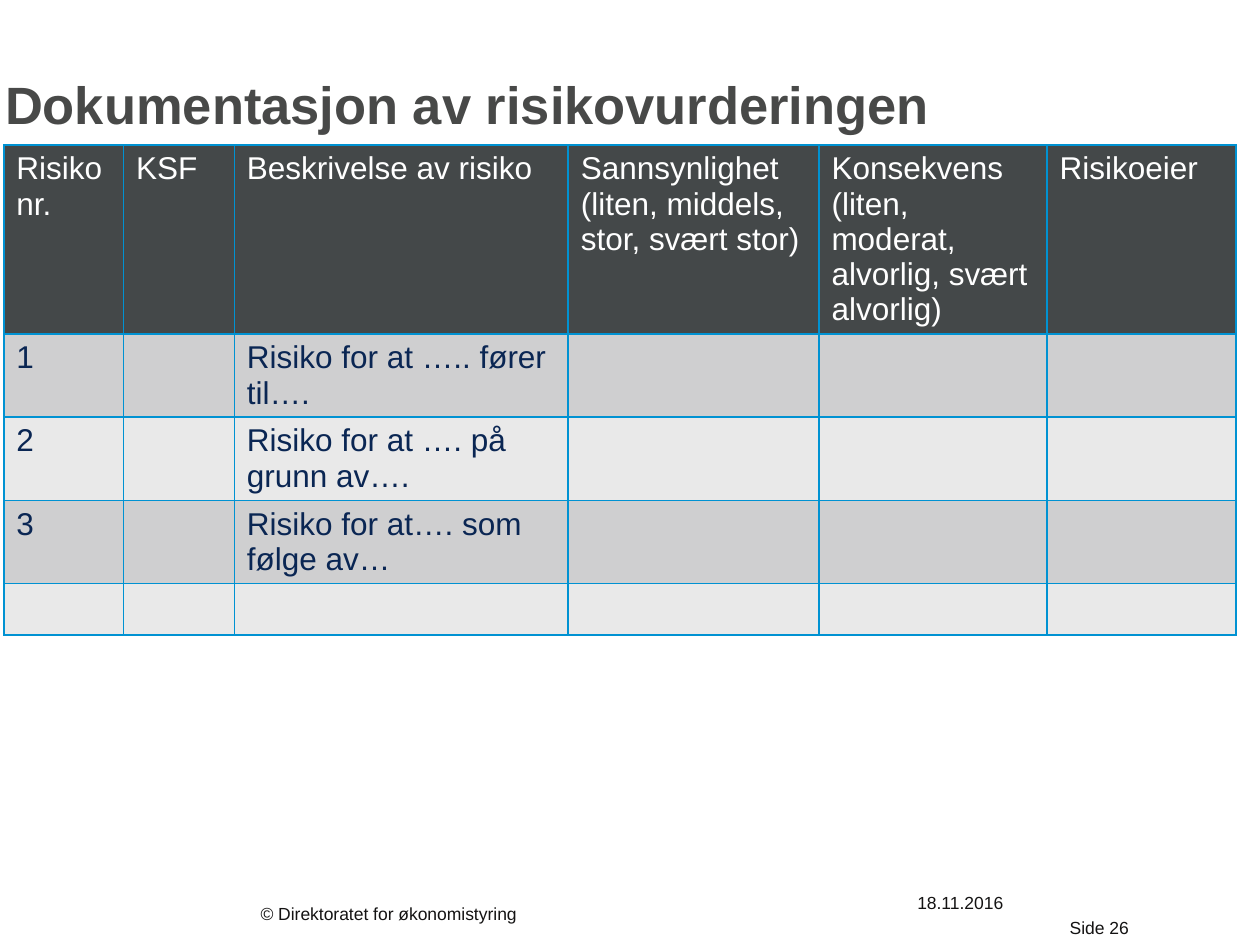
"""Build the risk assessment documentation slide."""
from dataclasses import dataclass

from lxml import etree
from pptx import Presentation
from pptx import util as u
from pptx.dml.color import RGBColor
from pptx.enum import text
from pptx.oxml import ns


@dataclass(frozen=True)
class Theme:
    font: str = "Arial"
    title: str = "484948"
    footer: str = "141313"
    header_text: str = "FFFFFF"
    body_text: str = "0A2653"
    header_fill: str = "444849"
    bands: tuple = ("CFCFD0", "E9E9E9")
    border: str = "0092D2"
    title_size: int = 30
    table_size: int = 18
    footer_size: int = 10


THEME = Theme()
COLUMN_WIDTHS = (0.95, 0.88, 2.65, 1.99, 1.81, 1.5)
ROW_HEIGHTS = (1.5, 0.66, 0.66, 0.66, 0.41)
ROWS = (
    ("Risiko nr.", "KSF", "Beskrivelse av risiko",
     "Sannsynlighet\n(liten, middels, stor, svært stor)",
     "Konsekvens\n(liten, moderat, alvorlig, svært alvorlig)", "Risikoeier"),
    ("1", "", "Risiko for at ….. fører til….", "", "", ""),
    ("2", "", "Risiko for at …. på grunn av….", "", "", ""),
    ("3", "", "Risiko for at…. som følge av…", "", "", ""),
    ("",) * 6,
)
FOOTERS = (
    ("Side 26", (8.49, 7.28, 0.74, 0.15), 0, text.MSO_ANCHOR.TOP),
    ("© Direktoratet for økonomistyring", (1.97, 7.08, 4.84, 0.34), 0.1,
     text.MSO_ANCHOR.MIDDLE),
    ("18.11.2016", (7.28, 7.08, 1.08, 0.34), 0, text.MSO_ANCHOR.TOP),
)


def style_font(font, size, color, bold=False):
    font.name = THEME.font
    font.size = u.Pt(size)
    font.bold = bold
    font.color.rgb = RGBColor.from_string(color)


def write_text(frame, content, size, color, bold=False):
    for index, line in enumerate(content.split("\n")):
        paragraph = frame.add_paragraph() if index else frame.paragraphs[0]
        paragraph.alignment = text.PP_ALIGN.LEFT
        if line:
            run = paragraph.add_run()
            run.text = line
            style_font(run.font, size, color, bold)
        else:
            style_font(paragraph.font, size, color, bold)


def set_frame(frame, inset, anchor):
    frame.word_wrap = True
    frame.auto_size = text.MSO_AUTO_SIZE.NONE
    frame.vertical_anchor = anchor
    frame.margin_left = frame.margin_right = u.Inches(inset)
    frame.margin_top = frame.margin_bottom = u.Inches(inset / 2)


def add_title(slide, content):
    title = slide.shapes.title
    title.left, title.top = u.Inches(0.04), u.Inches(0.28)
    title.width, title.height = u.Inches(9.21), u.Inches(0.79)
    set_frame(title.text_frame, 0, text.MSO_ANCHOR.BOTTOM)
    write_text(title.text_frame, content, THEME.title_size, THEME.title, True)


def add_footer(slide, content, place, inset, anchor):
    box = slide.shapes.add_textbox(*map(u.Inches, place))
    set_frame(box.text_frame, inset, anchor)
    write_text(box.text_frame, content, THEME.footer_size, THEME.footer)


def set_borders(cell):
    properties = cell._tc.get_or_add_tcPr()
    for index, side in enumerate(("a:lnL", "a:lnR", "a:lnT", "a:lnB")):
        line = etree.Element(ns.qn(side), w=str(u.Pt(1)))
        fill = etree.SubElement(line, ns.qn("a:solidFill"))
        etree.SubElement(fill, ns.qn("a:srgbClr"), val=THEME.border)
        properties.insert(index, line)


def format_cell(cell, content, fill, color):
    cell.fill.solid()
    cell.fill.fore_color.rgb = RGBColor.from_string(fill)
    write_text(cell.text_frame, content, THEME.table_size, color)
    set_borders(cell)


def add_risk_table(slide):
    table = slide.shapes.add_table(
        len(ROWS), len(COLUMN_WIDTHS), u.Inches(0.03), u.Inches(1.15),
        u.Inches(sum(COLUMN_WIDTHS)), u.Inches(sum(ROW_HEIGHTS))).table
    table.first_row = table.horz_banding = False
    for column, width in zip(table.columns, COLUMN_WIDTHS):
        column.width = u.Inches(width)
    for index, (row, height) in enumerate(zip(table.rows, ROW_HEIGHTS)):
        row.height = u.Inches(height)
        fill = THEME.bands[(index - 1) % 2] if index else THEME.header_fill
        color = THEME.body_text if index else THEME.header_text
        for cell, content in zip(row.cells, ROWS[index]):
            format_cell(cell, content, fill, color)


def main():
    presentation = Presentation()
    presentation.slide_width = u.Inches(10)
    presentation.slide_height = u.Inches(7.5)
    slide = presentation.slides.add_slide(presentation.slide_layouts[5])
    for footer in FOOTERS:
        add_footer(slide, *footer)
    add_title(slide, "Dokumentasjon av risikovurderingen")
    add_risk_table(slide)
    presentation.save("out.pptx")


if __name__ == "__main__":
    main()
